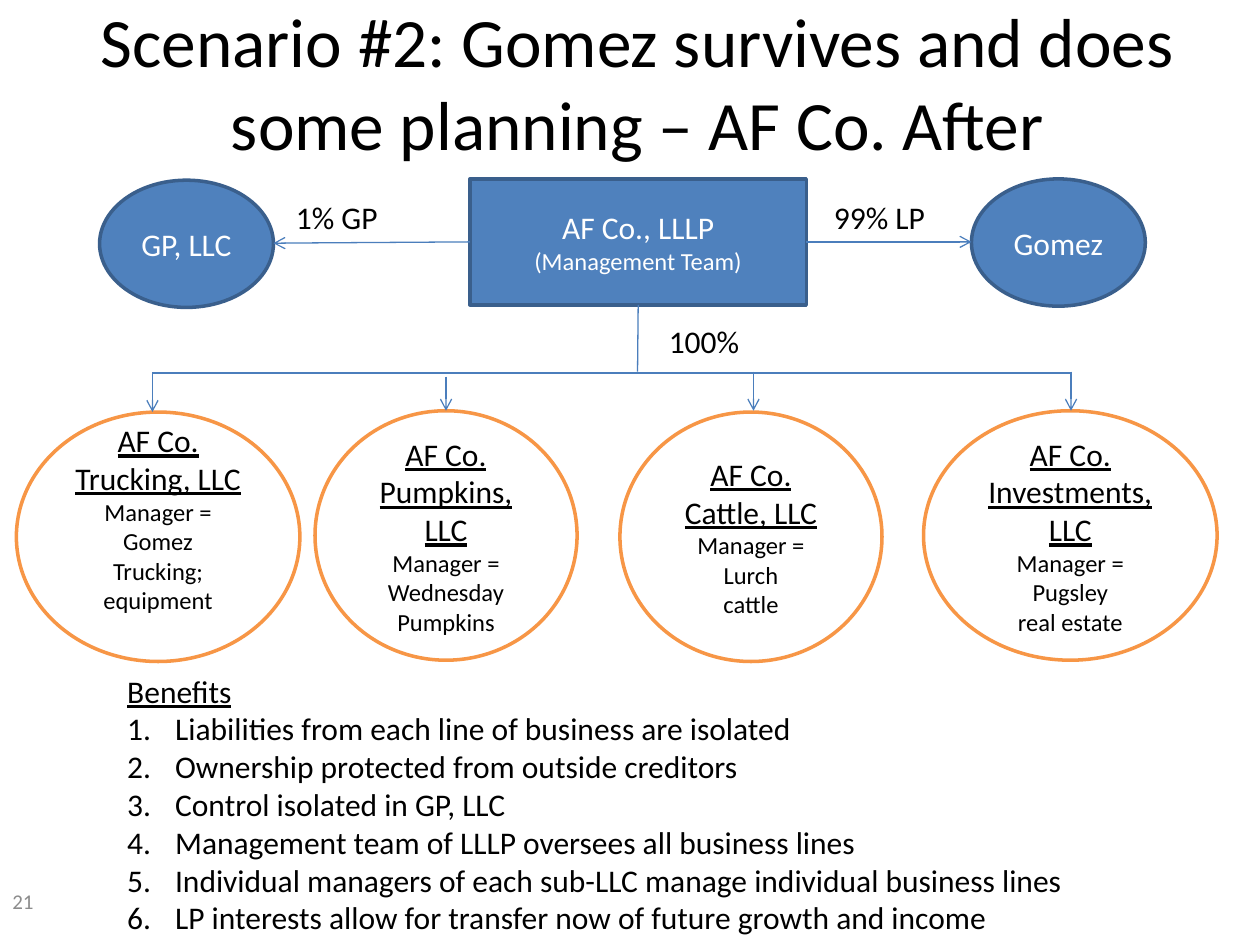
"""Build the AF Co. ownership slide with its four business lines and the benefits."""
from pptx import Presentation
from pptx import util as u
from pptx.dml.color import RGBColor
from pptx.enum import shapes, text
from pptx.oxml import ns
from lxml import etree

COLOURS = {"blue": "4F81BD", "navy": "3A5F8C", "link": "4B7EBC", "orange": "F79646",
           "white": "FFFFFF", "black": "000000", "grey": "8C8C8C"}
OVAL = shapes.MSO_SHAPE.OVAL
RECTANGLE = shapes.MSO_SHAPE.RECTANGLE
CENTER = text.PP_ALIGN.CENTER
LEFT = text.PP_ALIGN.LEFT
MIDDLE = text.MSO_ANCHOR.MIDDLE
TOP = text.MSO_ANCHOR.TOP


def colour(name):
    """Return the RGB colour stored under a name."""
    return RGBColor.from_string(COLOURS[name])


def apply(target, **values):
    """Set each given attribute on the target."""
    for name, value in values.items():
        setattr(target, name, value)


class OwnershipSlide:
    """Hold the style and the current slide, and add its elements."""

    font = "Calibri"
    large, small = 18, 14

    def __init__(self, deck):
        """Add a title and content slide to the deck."""
        self.slide = deck.slides.add_slide(deck.slide_layouts[1])

    def place(self, holder, box):
        """Move a placeholder to a box given in inches."""
        apply(holder, **dict(zip(("left", "top", "width", "height"), map(u.Inches, box))))

    def fill_text(self, holder, lines, ink="black", align=CENTER, anchor=MIDDLE):
        """Set lines of (wording, size, underline) and return the paragraphs."""
        frame = holder.text_frame
        apply(frame, word_wrap=True, auto_size=text.MSO_AUTO_SIZE.NONE, vertical_anchor=anchor)
        paragraphs = []
        for wording, size, underline in lines:
            paragraph = frame.add_paragraph() if paragraphs else frame.paragraphs[0]
            apply(paragraph, alignment=align, space_before=u.Pt(0))
            run = paragraph.add_run()
            run.text = wording
            apply(run.font, name=self.font, size=u.Pt(size), underline=underline)
            run.font.color.rgb = colour(ink)
            paragraphs.append(paragraph)
        return paragraphs

    def title(self, box, wording):
        """Fill the title placeholder."""
        heading = self.slide.shapes.title
        self.place(heading, box)
        self.fill_text(heading, [(wording, 39.6, False)])

    def numbered_list(self, box, heading, items):
        """Fill the body placeholder with an underlined heading and numbered items."""
        body = self.slide.placeholders[1]
        self.place(body, box)
        lines = [(heading, self.large, True)] + [(item, self.large, False) for item in items]
        for index, paragraph in enumerate(self.fill_text(body, lines, align=LEFT, anchor=TOP)):
            properties = paragraph._p.get_or_add_pPr()
            indent = u.Inches(0.38) if index else 0
            properties.set("marL", str(indent))
            properties.set("indent", str(-indent))
            if index:
                bullet = etree.SubElement(properties, ns.qn("a:buAutoNum"))
                bullet.set("type", "arabicPeriod")
            else:
                etree.SubElement(properties, ns.qn("a:buNone"))

    def entity(self, kind, box, lines, fill="blue", line="navy", ink="white"):
        """Add an outlined shape for a company or an owner."""
        shape = self.slide.shapes.add_shape(kind, *map(u.Inches, box))
        shape.shadow.inherit = False
        shape.fill.solid()
        shape.fill.fore_color.rgb = colour(fill)
        shape.line.color.rgb = colour(line)
        shape.line.width = u.Pt(2)
        self.fill_text(shape, lines, ink)
        return shape

    def business(self, box, company, *details):
        """Add an oval for a business line."""
        lines = [(company, self.large, True)] + [(detail, self.small, False) for detail in details]
        return self.entity(OVAL, box, lines, "white", "orange", "black")

    def label(self, box, wording, size=large, ink="black", anchor=TOP):
        """Add a short left-aligned text."""
        note = self.slide.shapes.add_textbox(*map(u.Inches, box))
        self.fill_text(note, [(wording, size, False)], ink, LEFT, anchor)

    def link(self, start, end, arrow=True, source=None, side=0):
        """Add a straight line, optionally with an arrowhead and a joined start."""
        connector = self.slide.shapes.add_connector(
            shapes.MSO_CONNECTOR.STRAIGHT, *map(u.Inches, start + end))
        if source is not None:
            connector.begin_connect(source, side)
        connector.line.color.rgb = colour("link")
        connector.line.width = u.Pt(0.75)
        properties = connector._element.spPr
        if arrow:
            head = etree.SubElement(properties.find(ns.qn("a:ln")), ns.qn("a:tailEnd"))
            head.set("type", "arrow")
        etree.SubElement(properties, ns.qn("a:effectLst"))


def main():
    """Build and save the deck."""
    deck = Presentation()
    apply(deck, slide_width=u.Inches(10), slide_height=u.Inches(7.5))
    page = OwnershipSlide(deck)

    page.title((0.56, 0.02, 9, 1.25),
               "Scenario #2: Gomez survives and does some planning – AF Co. After")
    page.numbered_list((0.91, 5.28, 8.29, 2.22), "Benefits", (
        "Liabilities from each line of business are isolated",
        "Ownership protected from outside creditors",
        "Control isolated in GP, LLC",
        "Management team of LLLP oversees all business lines",
        "Individual managers of each sub-LLC manage individual business lines",
        "LP interests allow for transfer now of future growth and income"))

    partnership = page.entity(RECTANGLE, (3.73, 1.42, 2.67, 1), [
        ("AF Co., LLLP", page.large, False), ("(Management Team)", page.small, False)])
    page.entity(OVAL, (0.79, 1.43, 1.38, 1.01), [("GP, LLC", page.large, False)])
    page.entity(OVAL, (7.71, 1.42, 1.38, 1.01), [("Gomez", page.large, False)])

    trucking = page.business((0.13, 3.27, 2.25, 1.98), "AF Co. Trucking, LLC",
                             "Manager = Gomez", "Trucking; equipment")
    trucking.text_frame.margin_bottom = u.Inches(0.35)
    page.business((2.5, 3.26, 2.08, 1.98), "AF Co. Pumpkins, LLC",
                  "Manager = Wednesday", "Pumpkins")
    page.business((4.92, 3.27, 2.08, 1.98), "AF Co. Cattle, LLC", "Manager = Lurch", "cattle")
    page.business((7.33, 3.26, 2.33, 1.98), "AF Co. Investments, LLC",
                  "Manager = Pugsley", "real estate")

    page.link((3.73, 1.92), (2.17, 1.93), source=partnership, side=1)
    page.link((6.4, 1.92), (7.71, 1.92), source=partnership, side=3)
    page.link((5.06, 2.42), (5.06, 2.95), arrow=False, source=partnership, side=2)
    page.link((1.21, 2.96), (8.5, 2.96), arrow=False)
    for x, top, bottom in ((1.21, 2.96, 3.27), (3.54, 2.99, 3.26),
                           (5.98, 2.95, 3.26), (8.5, 2.95, 3.26)):
        page.link((x, top), (x, bottom))

    page.label((2.25, 1.52, 1.29, 0.4), "1% GP")
    page.label((6.52, 1.52, 1.07, 0.4), "99% LP")
    page.label((5.21, 2.51, 0.96, 0.4), "100%")
    page.label((0, 6.95, 2.33, 0.4), "21", 12, "grey", MIDDLE)
    deck.save("out.pptx")


if __name__ == "__main__":
    main()
